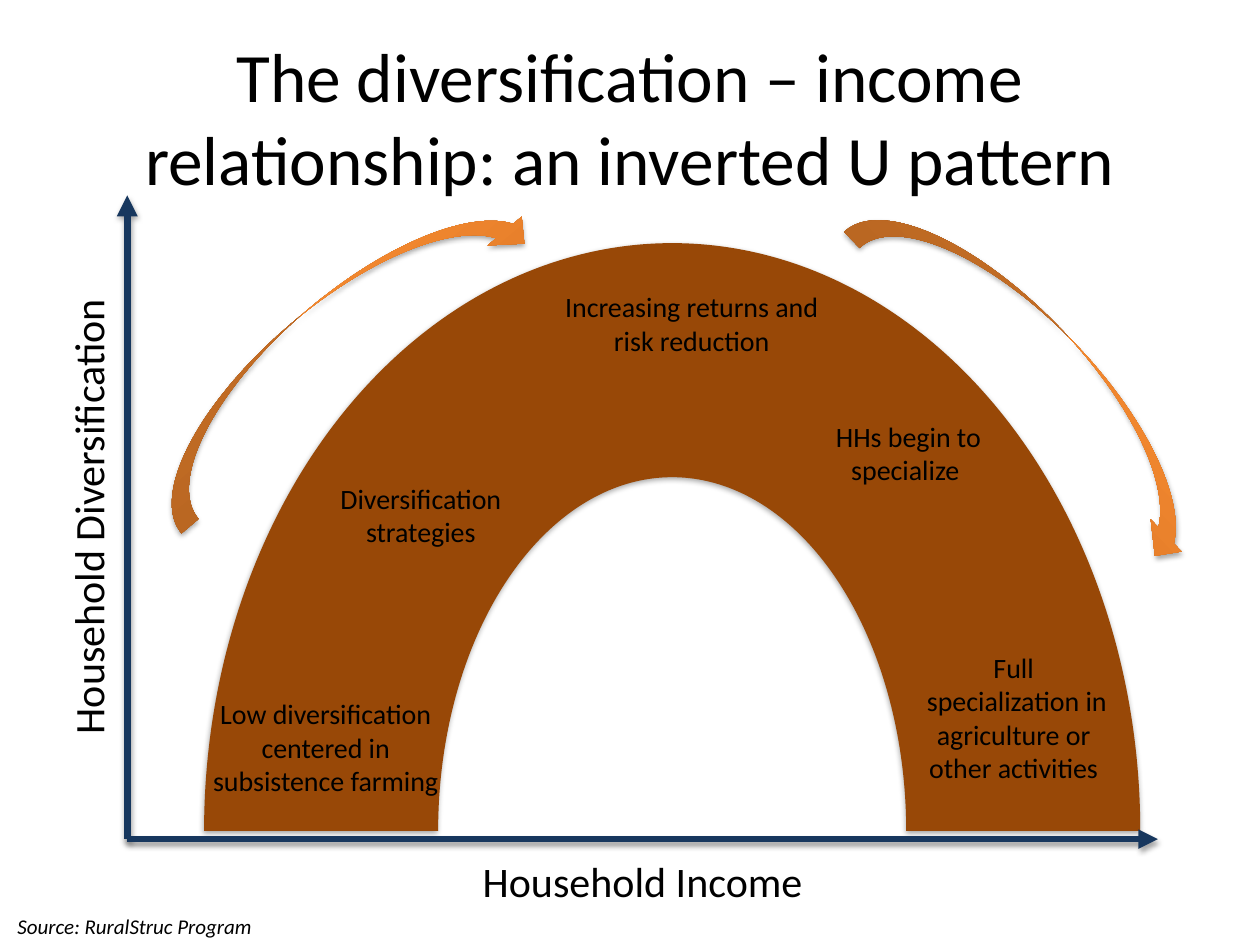
"""Build a slide on the inverted U link between diversification and income."""
from dataclasses import dataclass

from pptx import Presentation
from pptx.dml.color import RGBColor
from pptx.enum.dml import MSO_LINE_DASH_STYLE
from pptx.enum.shapes import MSO_CONNECTOR, MSO_SHAPE
from pptx.enum.text import MSO_ANCHOR, MSO_AUTO_SIZE, PP_ALIGN
from pptx.oxml import parse_xml
from pptx.oxml.ns import nsdecls, qn
from pptx.util import Inches, Pt

CENTER, LEFT = PP_ALIGN.CENTER, PP_ALIGN.LEFT
TOP, MIDDLE = MSO_ANCHOR.TOP, MSO_ANCHOR.MIDDLE
GROW, FIXED = MSO_AUTO_SIZE.SHAPE_TO_FIT_TEXT, MSO_AUTO_SIZE.NONE
STRAIGHT, SOLID = MSO_CONNECTOR.STRAIGHT, MSO_LINE_DASH_STYLE.SOLID
BLOCK_ARC, CURVED_ARROW = MSO_SHAPE.BLOCK_ARC, MSO_SHAPE.CURVED_DOWN_ARROW

FONT = "Calibri"
COLORS = {"text": "000000", "arc": "984807", "axis": "17375E", "shadow": "000000"}
ARROW_STOPS = ((0, "CC6E20"), (80, "FF9034"), (100, "FF9136"))
ORIGIN = (1.01, 6.66)


@dataclass(frozen=True)
class Box:
    """Position, size and rotation in inches and degrees."""

    left: float
    top: float
    width: float
    height: float
    rotation: float = 0

    def lengths(self) -> tuple:
        return tuple(Inches(value) for value in (self.left, self.top, self.width, self.height))


@dataclass(frozen=True)
class Label:
    """A text with its box and format."""

    text: str
    box: Box
    size: float = 16
    align: PP_ALIGN = CENTER
    italic: bool = False
    wrap: bool = True


@dataclass(frozen=True)
class Axis:
    """An arrow that leaves the chart origin."""

    end: tuple
    weight: float


LABELS = (
    Label("Low diversification centered in subsistence farming", Box(1.51, 5.48, 2.15, 0.91)),
    Label("Diversification strategies", Box(2.44, 3.77, 1.8, 0.64)),
    Label("Increasing returns and risk reduction", Box(4.24, 2.25, 2.5, 0.64)),
    Label(" HHs begin to specialize", Box(6.11, 3.28, 2.15, 0.64)),
    Label("Full \nspecialization in agriculture or \nother activities ", Box(6.97, 5.11, 2.2, 1.48)),
    Label("Household Income", Box(1.01, 6.74, 8.18, 0.5), size=24),
    Label("Household Diversification", Box(-1.86, 3.85, 5.11, 0.5, 270), size=24),
    Label("Source: RuralStruc Program", Box(0.04, 7.2, 2.12, 0.3), size=12,
          align=LEFT, italic=True, wrap=False),
)
AXES = (Axis((1.01, 1.55), 4), Axis((9.19, 6.66), 3.75))
ARC = Box(1.62, 1.93, 7.43, 9.33)
CURVED_ARROWS = (Box(0.77, 2.4, 3.74, 0.71, 319.8), Box(6.38, 2.59, 3.74, 0.71, 46.2))


def write_text(frame, text: str, *, size: float, align=CENTER, anchor=TOP,
               italic: bool = False, wrap: bool = True, auto_size=GROW) -> None:
    """Fill a text frame with one paragraph per line of text."""
    frame.word_wrap = wrap
    frame.auto_size = auto_size
    frame.vertical_anchor = anchor
    frame.text = text
    for paragraph in frame.paragraphs:
        paragraph.alignment = align
        for run in paragraph.runs:
            run.font.name = FONT
            run.font.size = Pt(size)
            run.font.italic = italic
            run.font.color.rgb = RGBColor.from_string(COLORS["text"])


def add_shadow(shape) -> None:
    """Put a soft shadow below a shape or connector."""
    shape.element.spPr.append(parse_xml(
        f'<a:effectLst {nsdecls("a")}><a:outerShdw blurRad="{Pt(3.1)}" dist="{Pt(1.8)}" '
        f'dir="5400000" rotWithShape="0"><a:srgbClr val="{COLORS["shadow"]}">'
        '<a:alpha val="35000"/></a:srgbClr></a:outerShdw></a:effectLst>'))


def add_figure(slide, kind, box: Box):
    """Add an outline-free preset shape with a shadow."""
    shape = slide.shapes.add_shape(kind, *box.lengths())
    shape.rotation = box.rotation
    shape.line.fill.background()
    add_shadow(shape)
    return shape


def add_arc(slide, box: Box) -> None:
    """Add the inverted U."""
    shape = add_figure(slide, BLOCK_ARC, box)
    shape.fill.solid()
    shape.fill.fore_color.rgb = RGBColor.from_string(COLORS["arc"])


def add_curved_arrow(slide, box: Box) -> None:
    """Add a curved arrow with an upward gradient."""
    shape = add_figure(slide, CURVED_ARROW, box)
    shape.fill.gradient()
    shape.fill.gradient_angle = 90
    stops = shape.element.spPr.find(".//" + qn("a:gsLst"))
    for stop in list(stops):
        stops.remove(stop)
    for position, color in ARROW_STOPS:
        stops.append(parse_xml(f'<a:gs {nsdecls("a")} pos="{position * 1000}">'
                               f'<a:srgbClr val="{color}"/></a:gs>'))


def add_axis(slide, axis: Axis) -> None:
    """Add an axis from the origin with an arrowhead at its end."""
    connector = slide.shapes.add_connector(
        STRAIGHT, *(Inches(value) for value in ORIGIN + axis.end))
    connector.line.color.rgb = RGBColor.from_string(COLORS["axis"])
    connector.line.width = Pt(axis.weight)
    connector.line.dash_style = SOLID
    connector.element.spPr.find(qn("a:ln")).append(
        parse_xml(f'<a:tailEnd {nsdecls("a")} type="triangle"/>'))
    add_shadow(connector)


def add_label(slide, label: Label) -> None:
    """Add a text box."""
    text_box = slide.shapes.add_textbox(*label.box.lengths())
    text_box.rotation = label.box.rotation
    write_text(text_box.text_frame, label.text, size=label.size, align=label.align,
               italic=label.italic, wrap=label.wrap)


def main() -> None:
    """Build and save the presentation."""
    presentation = Presentation()
    presentation.slide_width, presentation.slide_height = Inches(10), Inches(7.5)
    slide = presentation.slides.add_slide(presentation.slide_layouts[5])
    title = slide.shapes.title
    title.left, title.top, title.width, title.height = Box(0.5, 0.3, 9, 1.25).lengths()
    write_text(title.text_frame, "The diversification – income relationship: an inverted U pattern",
               size=39.6, anchor=MIDDLE, auto_size=FIXED)
    add_arc(slide, ARC)
    for label in LABELS[:5]:
        add_label(slide, label)
    for axis in AXES:
        add_axis(slide, axis)
    for label in LABELS[5:7]:
        add_label(slide, label)
    for box in CURVED_ARROWS:
        add_curved_arrow(slide, box)
    add_label(slide, LABELS[7])
    presentation.save("out.pptx")


if __name__ == "__main__":
    main()
